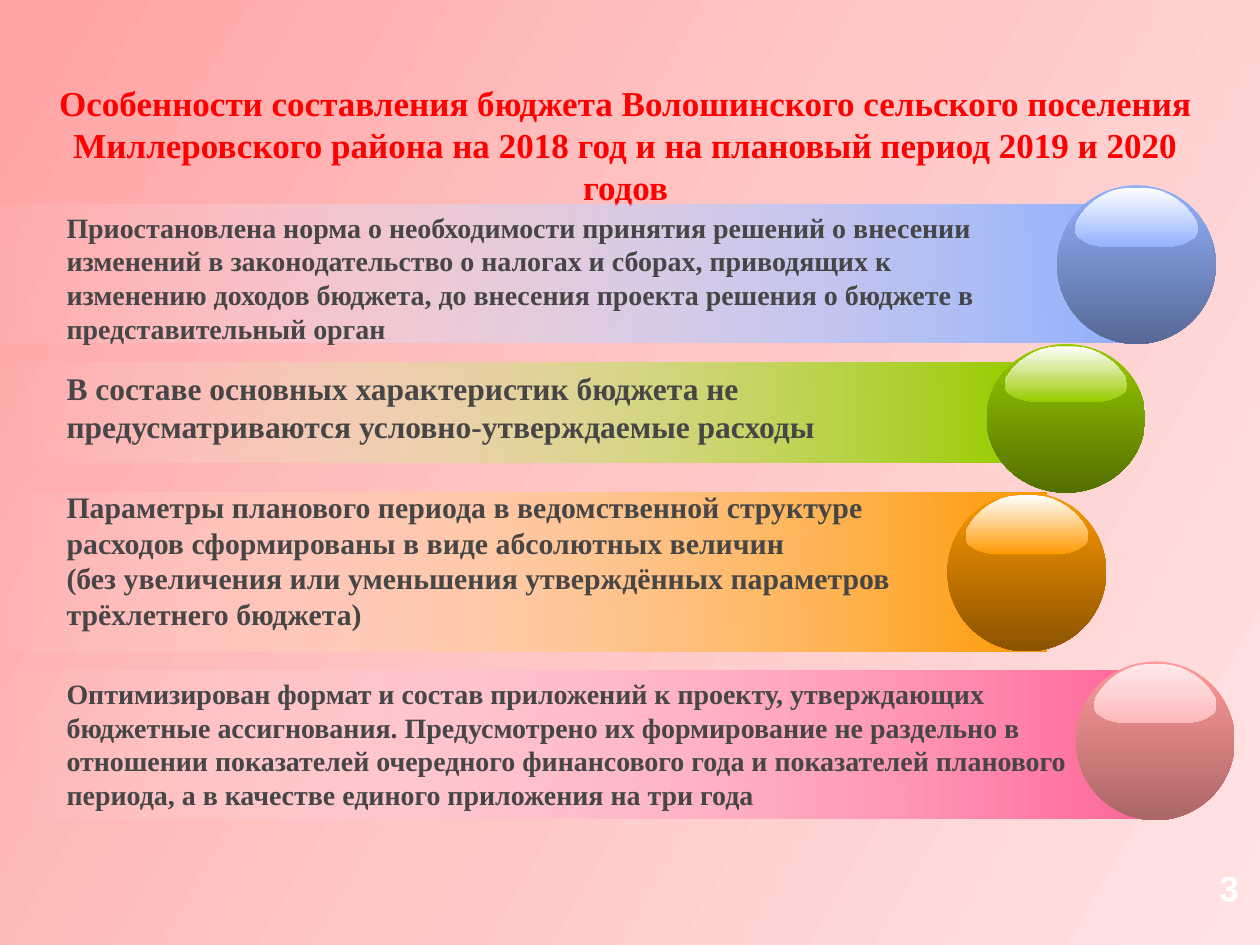
from dataclasses import dataclass
from typing import Any

from lxml.etree import SubElement
from pptx import Presentation
from pptx.dml.color import RGBColor
from pptx.enum.shapes import MSO_SHAPE as Shape
from pptx.enum.text import PP_ALIGN as Align
from pptx.oxml.ns import qn
from pptx.util import Inches, Pt


@dataclass(frozen=True)
class Theme:
    serif: str = "Times New Roman"
    sans: str = "Arial"
    title: str = "FF0000"
    body: str = "464646"
    white: str = "FFFFFF"
    heading_size: int = 20


@dataclass(frozen=True)
class Stop:
    position: int
    color: str
    alpha: int = 100
    shade: int = 100


@dataclass(frozen=True)
class Box:
    left: float
    top: float
    width: float
    height: float

    def lengths(self) -> list[int]:
        return [Inches(v) for v in (self.left, self.top, self.width, self.height)]


@dataclass(frozen=True)
class Band:
    text: str
    size: int
    text_box: Box
    bar: Box
    ball: Box
    bar_color: str
    ball_color: str
    ball_shade: int
    gloss: tuple[Stop, ...]


THEME = Theme()
BACKGROUND = (Stop(0, "FFA3A4"), Stop(50, "FFC6C6"), Stop(100, "FFE3E3"))
PINK_GLOSS = (Stop(0, "FFE9E9"), Stop(50, "FFD2D3"), Stop(100, "FFB7B9"))

# Left half of the highlight, from top centre to bottom, in hundredths of an inch
BALL_SIZE = 1.26
GLOSS_WIDTH = 97
GLOSS_LEFT, GLOSS_TOP = 14.5, 2
GLOSS_HALF = [
    (48.5, 0), (42, 0), (35, 1), (28, 3), (22, 6), (17, 9), (12, 13),
    (8, 17), (4, 22), (1, 27), (0, 32), (0, 35), (2, 39), (5, 41),
    (8, 43), (13, 45), (18, 46), (22, 47), (35, 47),
]


def glow(color: str) -> tuple[Stop, ...]:
    return Stop(0, THEME.white), Stop(100, color)


BANDS = [
    Band("Приостановлена норма о необходимости принятия решений о внесении "
         "изменений в законодательство о налогах и сборах, приводящих к "
         "изменению доходов бюджета, до внесения проекта решения о бюджете в "
         "представительный орган",
         16, Box(0.43, 1.62, 7.64, 1.18), Box(-0.28, 1.62, 9.21, 1.1),
         Box(8.39, 1.47, BALL_SIZE, BALL_SIZE), "93B1FD", "93B1FD", 30, glow("93B1FD")),
    Band("В составе основных характеристик бюджета не предусматриваются "
         "условно-утверждаемые расходы",
         18, Box(0.43, 2.88, 7.24, 0.71), Box(0, 2.88, 8.07, 0.79),
         Box(7.83, 2.73, BALL_SIZE, 1.18), "99CC00", "99CC00", 25, glow("99CC00")),
    Band("Параметры планового периода в ведомственной структуре\n"
         "расходов сформированы в виде абсолютных величин \v"
         "(без увеличения или уменьшения утверждённых параметров "
         "трёхлетнего бюджета)",
         17, Box(0.43, 3.83, 7.72, 1.51), Box(-0.12, 3.91, 8.43, 1.26),
         Box(7.52, 3.91, BALL_SIZE, BALL_SIZE), "FF9900", "FF9900", 25, glow("FF9900")),
    Band("Оптимизирован формат и состав приложений к проекту, утверждающих "
         "бюджетные ассигнования. Предусмотрено их формирование не раздельно в "
         "отношении показателей очередного финансового года и показателей "
         "планового периода, а в качестве единого приложения на три года",
         16, Box(0.43, 5.32, 8.19, 1.18), Box(0, 5.32, 9.09, 1.18),
         Box(8.54, 5.25, BALL_SIZE, BALL_SIZE), "FF6699", "FF9999", 40, PINK_GLOSS),
]


def apply_gradient(fill: Any, element: Any, stops: tuple[Stop, ...], angle: int) -> None:
    """Fill with the stops; the angle runs clockwise from left to right."""
    fill.gradient()
    fill.gradient_angle = -angle % 360
    stop_list = next(element.iter(qn("a:gsLst")))
    for old in list(stop_list):
        stop_list.remove(old)
    for stop in stops:
        node = SubElement(stop_list, qn("a:gs"), pos=str(stop.position * 1000))
        color = SubElement(node, qn("a:srgbClr"), val=stop.color)
        for name, value in (("shade", stop.shade), ("alpha", stop.alpha)):
            if value < 100:
                SubElement(color, qn(f"a:{name}"), val=str(value * 1000))


def finish_shape(shape: Any, stops: tuple[Stop, ...], angle: int) -> None:
    shape.shadow.inherit = False
    shape.line.fill.background()
    apply_gradient(shape.fill, shape.element, stops, angle)


def add_text(page: Any, box: Box, text: str, size: int, color: str,
             font: str = THEME.serif, align: Align = Align.LEFT) -> None:
    frame = page.shapes.add_textbox(*box.lengths()).text_frame
    frame.word_wrap = True
    frame.text = text
    font_format = {"name": font, "size": Pt(size), "bold": True}
    for para in frame.paragraphs:
        para.alignment = align
        for span in para.runs:
            for name, value in font_format.items():
                setattr(span.font, name, value)
            span.font.color.rgb = RGBColor.from_string(color)


def add_gloss(page: Any, ball: Box, stops: tuple[Stop, ...]) -> None:
    """Draw the mirrored highlight, squeezed to the height of the ball."""
    mirrored = [(GLOSS_WIDTH - x, y) for x, y in reversed(GLOSS_HALF)]
    squeeze = ball.height / BALL_SIZE
    points = [(Inches(ball.left + (GLOSS_LEFT + x) / 100),
               Inches(ball.top + (GLOSS_TOP + y) / 100 * squeeze))
              for x, y in GLOSS_HALF + mirrored]
    builder = page.shapes.build_freeform(*points[0])
    builder.add_line_segments(points[1:], close=True)
    finish_shape(builder.convert_to_shape(), stops, 90)


def add_band(page: Any, band: Band) -> None:
    bar = page.shapes.add_shape(Shape.RECTANGLE, *band.bar.lengths())
    finish_shape(bar, (Stop(0, THEME.white, alpha=0), Stop(100, band.bar_color)), 0)
    ball = page.shapes.add_shape(Shape.OVAL, *band.ball.lengths())
    finish_shape(ball, (Stop(0, band.ball_color),
                        Stop(100, band.ball_color, shade=band.ball_shade)), 90)
    add_gloss(page, band.ball, band.gloss)
    add_text(page, band.text_box, band.text, band.size, THEME.body)


def main() -> None:
    deck = Presentation()
    deck.slide_width, deck.slide_height = Inches(10), Inches(7.5)
    page = deck.slides.add_slide(deck.slide_layouts[6])
    apply_gradient(page.background.fill, page.element, BACKGROUND, 30)
    add_text(page, Box(0.28, 0.6, 9.37, 1.11),
             "Особенности составления бюджета Волошинского сельского поселения "
             "Миллеровского района на 2018 год и на плановый период 2019 и 2020 годов",
             THEME.heading_size, THEME.title, align=Align.CENTER)
    for band in BANDS:
        add_band(page, band)
    add_text(page, Box(9.33, 6.83, 0.6, 0.43), "3", THEME.heading_size,
             THEME.white, THEME.sans, Align.RIGHT)
    deck.save("out.pptx")


if __name__ == "__main__":
    main()
